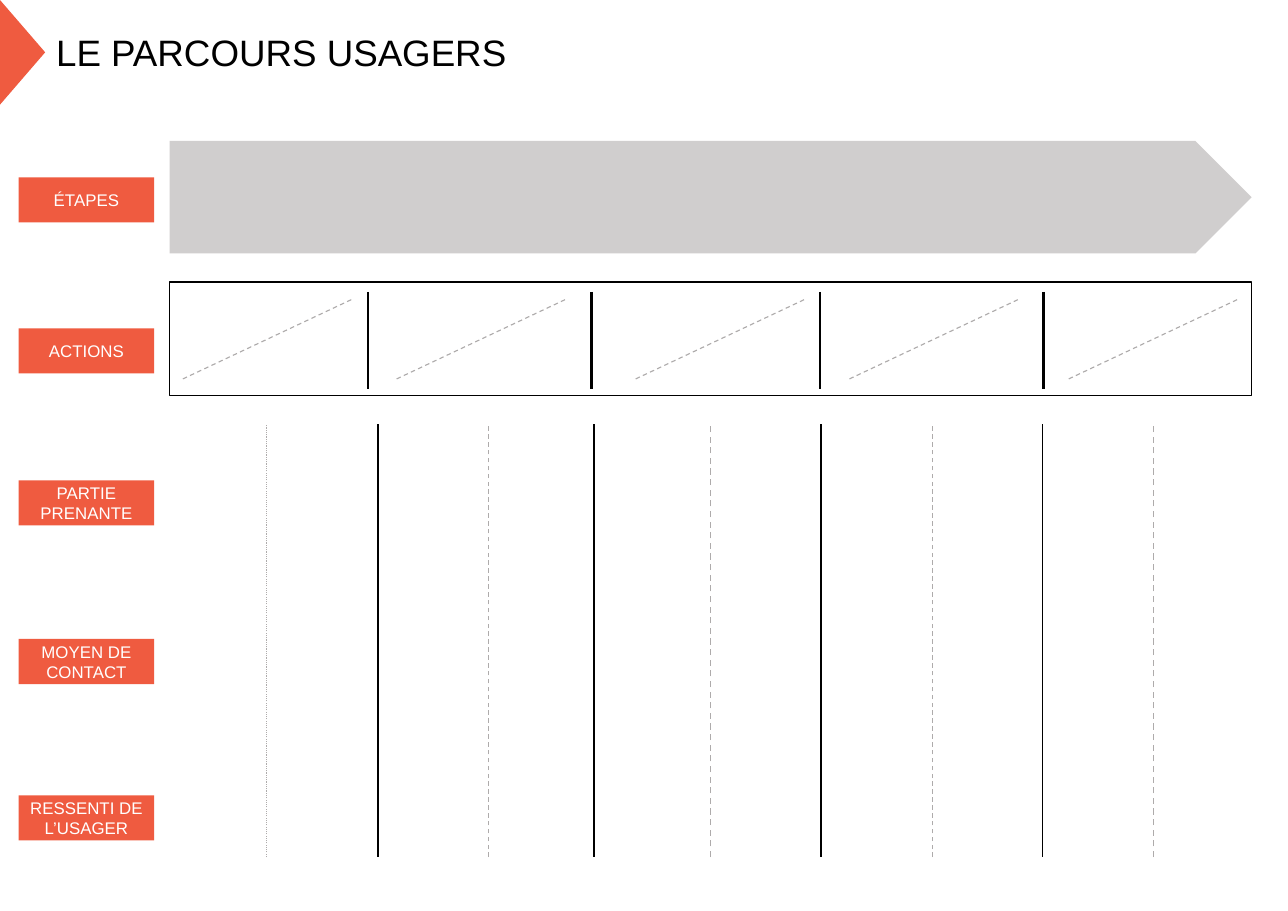
from dataclasses import dataclass
from typing import Optional

from lxml.etree import SubElement
from pptx import Presentation
from pptx.dml.color import RGBColor
from pptx.enum.dml import MSO_LINE
from pptx.enum.shapes import MSO_CONNECTOR, MSO_SHAPE
from pptx.enum.text import MSO_ANCHOR, MSO_AUTO_SIZE, PP_ALIGN
from pptx.oxml.ns import qn
from pptx.shapes.autoshape import Shape
from pptx.slide import Slide
from pptx.util import Inches, Pt

FONT = "Arial"
ORANGE, BLACK, WHITE = "EF5B40", "000000", "FFFFFF"
BAND_GREY, GUIDE_GREY = "D0CECE", "AEABAB"


@dataclass
class Box:
    left: float
    top: float
    width: float
    height: float


@dataclass
class RowLabel:
    text: str
    top: float


@dataclass
class Guide:
    x: float
    weight: float
    dash: MSO_LINE


ROW_LABELS = [
    RowLabel("ÉTAPES", 1.61),
    RowLabel("ACTIONS", 2.98),
    RowLabel("PARTIE PRENANTE", 4.36),
    RowLabel("MOYEN DE CONTACT", 5.8),
    RowLabel("RESSENTI DE L’USAGER", 7.22),
]
ACTION_DIVIDERS = [3.34, 5.37, 7.44, 9.47]
ACTION_DIAGONALS = [1.66, 3.6, 5.77, 7.71, 9.7]
COLUMN_DIVIDERS = [3.43, 5.39, 7.45, 9.46]
COLUMN_GUIDES = [
    Guide(2.42, 0.75, MSO_LINE.ROUND_DOT),
    Guide(4.43, 0.75, MSO_LINE.DASH),
    Guide(6.45, 1, MSO_LINE.DASH),
    Guide(8.46, 0.75, MSO_LINE.DASH),
    Guide(10.47, 1, MSO_LINE.DASH),
]


def rgb(hex_colour: str) -> RGBColor:
    return RGBColor.from_string(hex_colour)


def add_block(slide: Slide, kind: MSO_SHAPE, box: Box, fill: str,
              outline: Optional[str] = None) -> Shape:
    block = slide.shapes.add_shape(kind, Inches(box.left), Inches(box.top),
                                   Inches(box.width), Inches(box.height))
    block.shadow.inherit = False
    block.fill.solid()
    block.fill.fore_color.rgb = rgb(fill)
    if outline:
        block.line.color.rgb = rgb(outline)
        block.line.width = Pt(1)
    else:
        block.line.fill.background()
    return block


def write_text(shape: Shape, text: str, size: float, colour: str,
               align: PP_ALIGN) -> None:
    frame = shape.text_frame
    frame.text = text
    frame.word_wrap = True
    frame.auto_size = MSO_AUTO_SIZE.NONE
    frame.vertical_anchor = MSO_ANCHOR.MIDDLE
    paragraph = frame.paragraphs[0]
    paragraph.alignment = align
    font = paragraph.runs[0].font
    font.name = FONT
    font.size = Pt(size)
    font.color.rgb = rgb(colour)


def add_line(slide: Slide, start: tuple[float, float], end: tuple[float, float],
             colour: str, weight: float, dash: Optional[MSO_LINE] = None) -> None:
    line = slide.shapes.add_connector(MSO_CONNECTOR.STRAIGHT,
                                      Inches(start[0]), Inches(start[1]),
                                      Inches(end[0]), Inches(end[1]))
    line.line.color.rgb = rgb(colour)
    line.line.width = Pt(weight)
    if dash is not None:
        line.line.dash_style = dash
    SubElement(line._element.spPr, qn("a:effectLst"))


def add_heading(slide: Slide) -> None:
    title = slide.shapes.title
    title.left, title.top = Inches(0.41), Inches(0.22)
    title.width, title.height = Inches(5.01), Inches(0.5)
    write_text(title, "LE PARCOURS USAGERS", 24, BLACK, PP_ALIGN.LEFT)
    marker = add_block(slide, MSO_SHAPE.ISOSCELES_TRIANGLE,
                       Box(-0.27, 0.27, 0.95, 0.41), ORANGE)
    marker.rotation = 90


def add_row_labels(slide: Slide) -> None:
    for label in ROW_LABELS:
        block = add_block(slide, MSO_SHAPE.RECTANGLE,
                          Box(0.17, label.top, 1.23, 0.41), ORANGE)
        write_text(block, label.text, 11, WHITE, PP_ALIGN.CENTER)


def add_actions(slide: Slide) -> None:
    add_block(slide, MSO_SHAPE.RECTANGLE, Box(1.54, 2.56, 9.82, 1.03), WHITE, BLACK)
    for x in ACTION_DIVIDERS:
        add_line(slide, (x, 2.65), (x, 3.53), BLACK, 1.5)
    for x in ACTION_DIAGONALS:
        add_line(slide, (x, 3.44), (x + 1.53, 2.72), GUIDE_GREY, 0.75, MSO_LINE.DASH)


def add_columns(slide: Slide) -> None:
    top, bottom = 3.85, 7.78
    for x in COLUMN_DIVIDERS:
        add_line(slide, (x, top), (x, bottom), BLACK, 1)
    for guide in COLUMN_GUIDES:
        add_line(slide, (guide.x, bottom), (guide.x, top), GUIDE_GREY,
                 guide.weight, guide.dash)


def main() -> None:
    deck = Presentation()
    deck.slide_width, deck.slide_height = Inches(11.69), Inches(8.27)
    slide = deck.slides.add_slide(deck.slide_layouts[5])
    add_heading(slide)
    add_block(slide, MSO_SHAPE.PENTAGON, Box(1.54, 1.28, 9.82, 1.02), BAND_GREY)
    add_row_labels(slide)
    add_actions(slide)
    add_columns(slide)
    deck.save("out.pptx")


if __name__ == "__main__":
    main()
